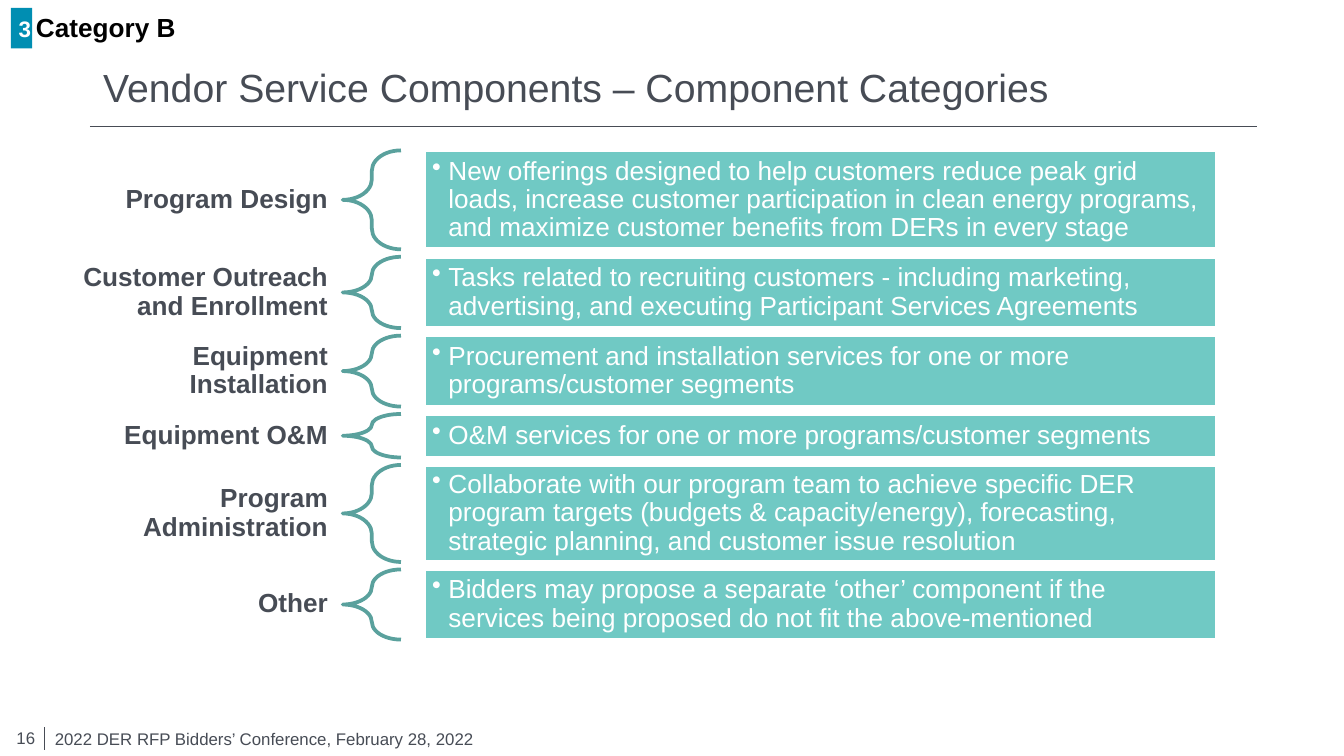
from dataclasses import dataclass

from lxml import etree
from pptx import Presentation
from pptx.dml.color import RGBColor
from pptx.enum import shapes as es, text as et
from pptx.oxml.ns import qn
from pptx.util import Pt

HUES = {"ink": "474C55", "blue": "008EB2", "teal": "70C9C4",
        "brace": "5AA19D", "white": "FFFFFF", "black": "000000"}
FONT = "Arial"
LEFT, MID, RIGHT = et.PP_ALIGN.LEFT, et.PP_ALIGN.CENTER, et.PP_ALIGN.RIGHT
TOP, GAP = 80.6, 4  # first row and space between rows


@dataclass
class Row:
    name: str
    note: str
    high: float
    lines: int = 1  # lines taken by the name


ROWS = [
    Row("Program Design",
        "New offerings designed to help customers reduce peak grid loads, "
        "increase customer participation in clean energy programs, and "
        "maximize customer benefits from DERs in every stage", 53),
    Row("Customer Outreach and Enrollment",
        "Tasks related to recruiting customers - including marketing, "
        "advertising, and executing Participant Services Agreements", 38.2, 2),
    Row("Equipment Installation",
        "Procurement and installation services for one or more "
        "programs/customer segments", 38, 2),
    Row("Equipment O&M",
        "O&M services for one or more programs/customer segments", 23.3),
    Row("Program Administration",
        "Collaborate with our program team to achieve specific DER program "
        "targets (budgets & capacity/energy), forecasting, strategic planning, "
        "and customer issue resolution", 52, 2),
    Row("Other",
        "Bidders may propose a separate ‘other’ component if the services "
        "being proposed do not fit the above-mentioned", 37.6),
]


def hue(key: str) -> RGBColor:
    return RGBColor.from_string(HUES[key])


def write(shape, words: str, size: float, key: str, bold: bool = False,
          align=LEFT, inset: tuple = (7.2, 3.6, 7.2, 3.6), middle: bool = True,
          bullet: bool = False, tight: bool = False) -> None:
    """Fill a shape with one styled paragraph."""
    frame = shape.text_frame
    frame.word_wrap = True
    frame.vertical_anchor = (et.MSO_ANCHOR.MIDDLE if middle
                             else et.MSO_ANCHOR.TOP)
    (frame.margin_left, frame.margin_top,
     frame.margin_right, frame.margin_bottom) = map(Pt, inset)
    para = frame.paragraphs[0]
    para.alignment = align
    if tight:
        para.line_spacing = 0.9
    if bullet:
        props = para._p.get_or_add_pPr()
        props.set("marL", str(Pt(8.64)))
        props.set("indent", str(-Pt(8.64)))
        etree.SubElement(props, qn("a:buChar")).set("char", "•")
    run = para.add_run()
    run.text = words
    font = run.font
    font.name, font.size, font.bold = FONT, Pt(size), bold
    font.color.rgb = hue(key)


def label(slide, box: tuple, words: str, size: float, key: str, **style):
    write(slide.shapes.add_textbox(*map(Pt, box)), words, size, key, **style)


def block(slide, kind, box: tuple, fill: str = "", line: str = ""):
    shape = slide.shapes.add_shape(kind, *map(Pt, box))
    shape.shadow.inherit = False
    if fill:
        shape.fill.solid()
        shape.fill.fore_color.rgb = hue(fill)
    else:
        shape.fill.background()
    if line:
        shape.line.color.rgb = hue(line)
        shape.line.width = Pt(2)
    else:
        shape.line.fill.background()
    return shape


def rule(slide, ends: tuple) -> None:
    line = slide.shapes.add_connector(es.MSO_CONNECTOR.STRAIGHT,
                                      *map(Pt, ends))
    line.line.color.rgb = hue("ink")
    line.line.width = Pt(0.75)
    etree.SubElement(line._element.spPr, qn("a:effectLst"))


def draw(slide, row: Row, top: float) -> None:
    """Name, brace and note of one category."""
    tall = 21.6 if row.lines == 1 else 34.6
    label(slide, (27.4, top + (row.high - tall) / 2, 156.2, tall), row.name,
          14, "ink", bold=True, align=RIGHT, inset=(7.9, 2.9, 7.9, 2.9),
          tight=True)
    brace = block(slide, es.MSO_SHAPE.LEFT_BRACE,
                  (183.6, top, 31.2, row.high), line="brace")
    brace.adjustments[0], brace.adjustments[1] = 0.35, 0.5
    card = block(slide, es.MSO_SHAPE.RECTANGLE,
                 (227.4, top, 424.8, row.high), "teal", "white")
    write(card, row.note, 14, "white", inset=(4.2,) * 4, bullet=True,
          tight=True)


def main() -> None:
    deck = Presentation()
    deck.slide_width, deck.slide_height = Pt(720), Pt(405)
    slide = deck.slides.add_slide(deck.slide_layouts[6])

    # Footer
    label(slide, (-4.3, 383, 30.2, 24.5), "16", 9, "ink", align=RIGHT)
    rule(slide, (23.8, 389.5, 23.8, 401.8))
    label(slide, (22.3, 386.6, 348.5, 18),
          "2022 DER RFP Bidders’ Conference, February 28, 2022", 9, "ink",
          middle=False)

    # Title
    rule(slide, (48.2, 67.7, 673.2, 67.7))
    label(slide, (48.2, 25.2, 625.7, 42.5),
          "Vendor Service Components – Component Categories", 21, "ink")

    # Section tag
    badge = block(slide, es.MSO_SHAPE.RECTANGLE, (5.8, 4.3, 11.5, 21.6),
                  "blue")
    write(badge, "3", 12, "white", bold=True, align=MID,
          inset=(3.6, 3.6, 0, 3.6))
    label(slide, (12.2, 5.8, 192.2, 17.3), "Category B", 14, "black",
          bold=True)

    # Categories
    top = TOP
    for row in ROWS:
        draw(slide, row, top)
        top += row.high + GAP

    deck.save("out.pptx")


if __name__ == "__main__":
    main()
